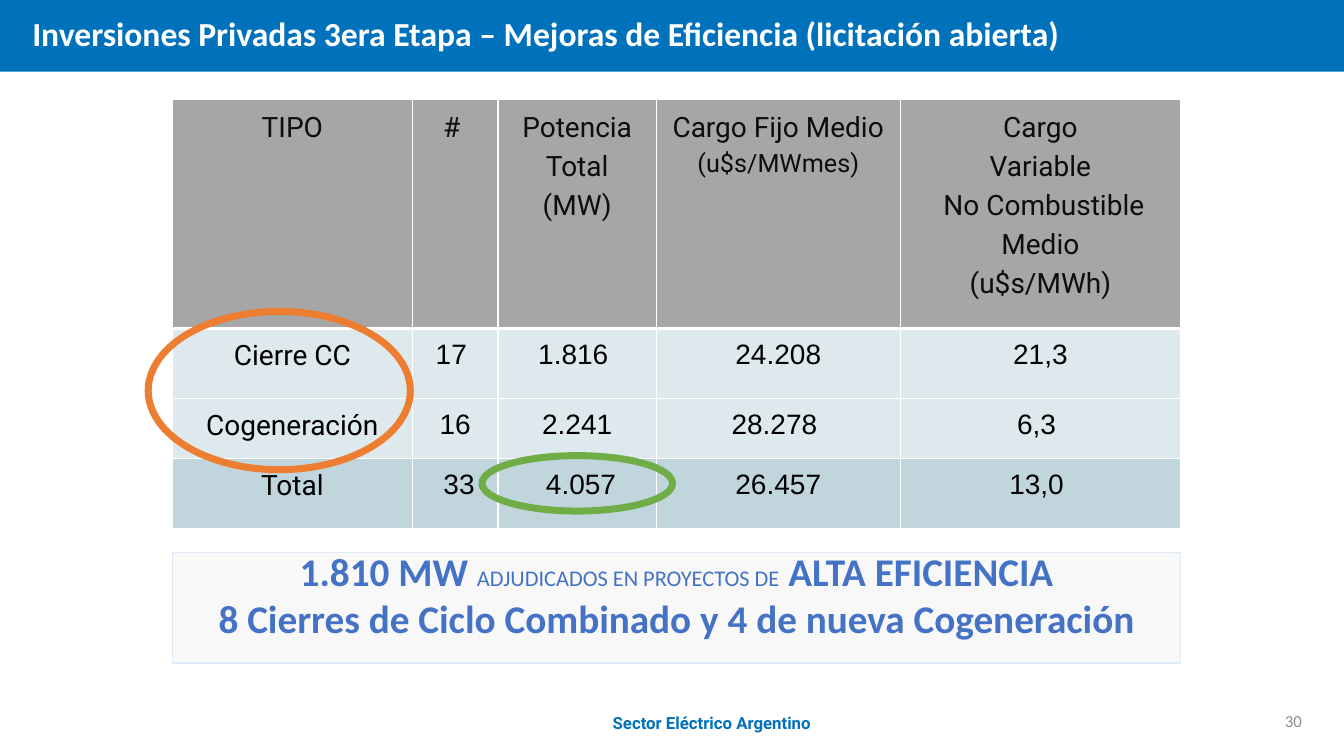
from lxml import etree
from pptx import Presentation
from pptx.dml.color import RGBColor
from pptx.enum.shapes import MSO_SHAPE
from pptx.enum.text import MSO_ANCHOR, MSO_AUTO_SIZE, PP_ALIGN
from pptx.oxml.ns import qn
from pptx.util import Inches, Pt

RECT, OVAL = MSO_SHAPE.RECTANGLE, MSO_SHAPE.OVAL
MIDDLE = MSO_ANCHOR.MIDDLE
LEFT, CENTER, RIGHT = PP_ALIGN.LEFT, PP_ALIGN.CENTER, PP_ALIGN.RIGHT
NO_FIT = MSO_AUTO_SIZE.NONE

WIDTH, HEIGHT = 13.33, 7.5
MARGIN, CONTENT_W = 1.71, 10
BLUE, CALLOUT_BLUE = "0072BC", "4472C4"
COLS = [2.38, 0.85, 1.57, 2.42, 2.78]
ROWS = [2.27, 0.69, 0.6, 0.69]
ROW_FILLS = ["A6A6A6", "DDE9EC", "DDE9EC", "C0D6DC"]
CELLS = [
    ["TIPO", "# ", "Potencia\nTotal (MW)", "Cargo Fijo Medio\n(u$s/MWmes)",
     "Cargo\nVariable\n No Combustible Medio\n(u$s/MWh)"],
    ["Cierre CC", "17 ", "1.816 ", "24.208", "21,3"],
    ["Cogeneración", "16", "2.241", "28.278 ", "6,3 "],
    ["Total", " 33", " 4.057", "26.457", "13,0 "],
]
CALLOUT = [
    [("1.810 MW", 28, True), ("  ", 14, False),
     ("ADJUDICADOS EN PROYECTOS DE", 16, False),
     (" ALTA EFICIENCIA", 28, True)],
    [("8 Cierres de Ciclo Combinado y 4 de nueva Cogeneración", 28, True)],
]


def rgb(value):
    """Turn a hex string into a colour."""
    return RGBColor.from_string(value)


def style(font, size, name, color, bold=False):
    """Set the face, size, colour and weight of a font."""
    font.size, font.name, font.bold = Pt(size), name, bold
    font.color.rgb = rgb(color)


def add_box(slide, kind, box, fill=None, line=None, width=1):
    """Add a flat preset shape with an optional fill and outline."""
    sp = slide.shapes.add_shape(kind, *map(Inches, box))
    sp.shadow.inherit = False
    if fill:
        sp.fill.solid()
        sp.fill.fore_color.rgb = rgb(fill)
    else:
        sp.fill.background()
    if line:
        sp.line.color.rgb = rgb(line)
        sp.line.width = Pt(width)
    else:
        sp.line.fill.background()
    return sp


def add_header(slide, box):
    """Draw the title band behind the title placeholder."""
    x, y, w, h = box
    band = add_box(slide, RECT, box, BLUE)
    title = slide.shapes.title
    title._element.addprevious(band._element)
    title.left, title.top = Inches(x + 0.22), Inches(y)
    title.width, title.height = Inches(11), Inches(h)
    tf = title.text_frame
    tf.text = "Inversiones Privadas 3era Etapa – Mejoras de Eficiencia (licitación abierta)"
    tf.vertical_anchor, tf.auto_size, tf.word_wrap = MIDDLE, NO_FIT, True
    p = tf.paragraphs[0]
    p.alignment, p.line_spacing = LEFT, 0.9
    style(p.font, 24, "Calibri", "FFFFFF", True)


def set_borders(cell, row):
    """Rule a cell in white, thicker below the heading row."""
    tc_pr = cell._tc.get_or_add_tcPr()
    widths = {"L": 1, "R": 1, "T": 3 if row == 1 else 1, "B": 3 if row == 0 else 1}
    for i, (side, width) in enumerate(widths.items()):
        ln = etree.Element(qn(f"a:ln{side}"), w=str(Pt(width)))
        fill = etree.SubElement(ln, qn("a:solidFill"))
        etree.SubElement(fill, qn("a:srgbClr"), val="FFFFFF")
        tc_pr.insert(i, ln)


def fill_cell(cell, text, row, col):
    """Write and format one cell of the bids table."""
    cell.fill.solid()
    cell.fill.fore_color.rgb = rgb(ROW_FILLS[row])
    set_borders(cell, row)
    cell.text = text
    face = "Roboto" if row == 0 or col == 0 else "Arial"
    for p in cell.text_frame.paragraphs:
        p.alignment, p.line_spacing = CENTER, 1.19
        size = 18 if p.text == "(u$s/MWmes)" else 20
        style(p.font, size, face, "000000" if row else "0D0D0D")


def add_bids(slide, box):
    """Place the bids table and the ovals that mark its key cells."""
    x, y, w, h = box
    table = slide.shapes.add_table(len(ROWS), len(COLS), *map(Inches, box)).table
    for column, width in zip(table.columns, COLS):
        column.width = Inches(width)
    for row, height in zip(table.rows, ROWS):
        row.height = Inches(height)
    for r, texts in enumerate(CELLS):
        for c, text in enumerate(texts):
            fill_cell(table.cell(r, c), text, r, c)
    add_box(slide, OVAL, (x - 0.24, y + 2.1, 2.6, 1.57), line="ED7D31", width=5)
    add_box(slide, OVAL, (x + 3.07, y + 3.53, 1.89, 0.55), line="70AD47", width=5)


def add_callout(slide, box):
    """Place the pale box with the awarded capacity."""
    sp = add_box(slide, RECT, box, "D9D9D9", "DEEBF7")
    color = sp._element.spPr.find(qn("a:solidFill"))[0]
    etree.SubElement(color, qn("a:alpha"), val="17000")
    tf = sp.text_frame
    tf.word_wrap, tf.vertical_anchor = True, MIDDLE
    tf.margin_left = tf.margin_right = tf.margin_top = 0
    tf.margin_bottom = Inches(0.27)
    for i, runs in enumerate(CALLOUT):
        p = tf.add_paragraph() if i else tf.paragraphs[0]
        p.alignment = CENTER
        for text, size, bold in runs:
            r = p.add_run()
            r.text = text
            style(r.font, size, "Calibri", CALLOUT_BLUE, bold)


def add_label(slide, box, text, align, face, color, bold=False):
    """Place one line of small text in a box."""
    tf = slide.shapes.add_textbox(*map(Inches, box)).text_frame
    tf.text = text
    tf.word_wrap, tf.vertical_anchor = True, MIDDLE
    p = tf.paragraphs[0]
    p.alignment = align
    style(p.font, 12, face, color, bold)


def add_footer(slide, box):
    """Place the deck name and the page number."""
    x, y, w, h = box
    add_label(slide, (x + 3.44, y, 7.24, h), "Sector Eléctrico Argentino",
              CENTER, "Roboto", BLUE, True)
    add_label(slide, (x + w - 3.32, y + 0.05, 3, 0.4), "30", RIGHT, "Calibri", "8C8C8C")


def main():
    """Build the slide and save it."""
    prs = Presentation()
    prs.slide_width, prs.slide_height = Inches(WIDTH), Inches(HEIGHT)
    slide = prs.slides.add_slide(prs.slide_layouts[5])
    add_header(slide, (0, 0, WIDTH, 0.71))
    add_bids(slide, (MARGIN, 0.99, CONTENT_W, sum(ROWS)))
    add_callout(slide, (MARGIN, 5.48, CONTENT_W, 1.1))
    add_footer(slide, (0, 6.9, WIDTH, 0.55))
    prs.save("out.pptx")


if __name__ == "__main__":
    main()
